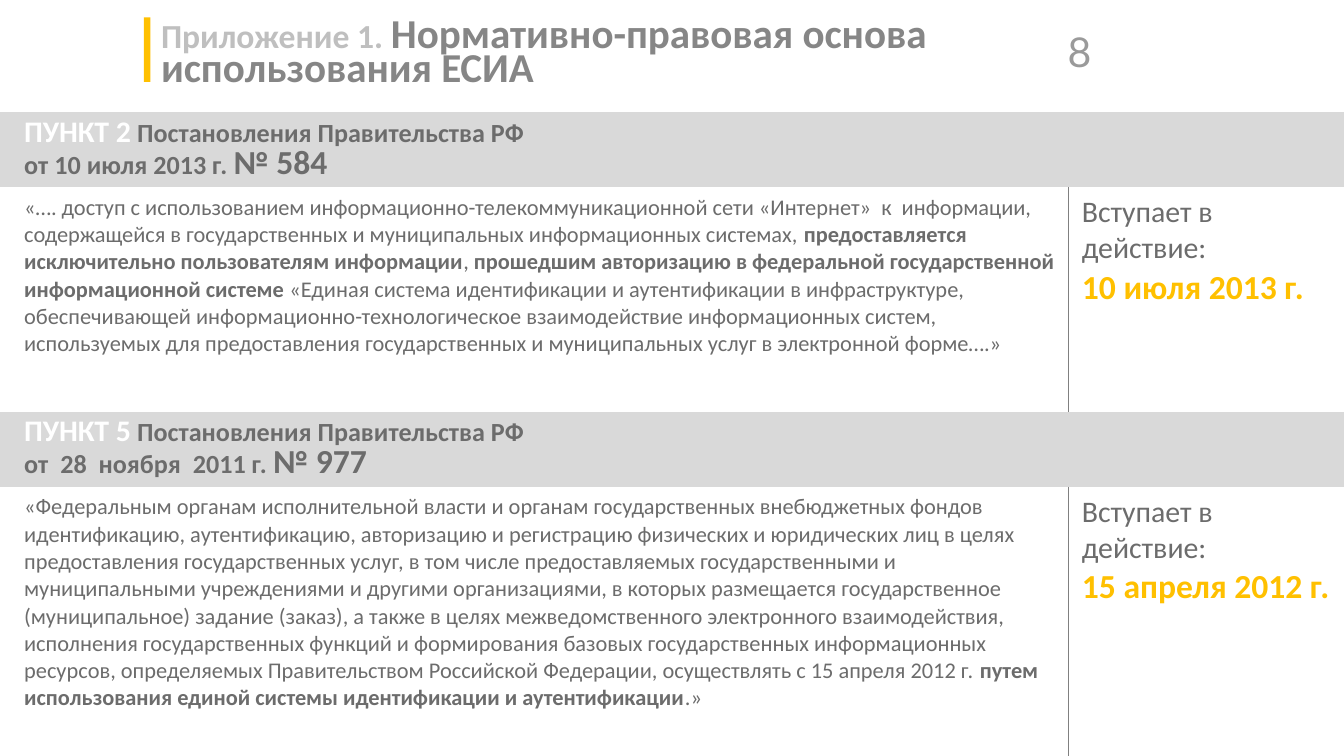
from lxml.etree import SubElement
from pptx import Presentation
from pptx.dml.color import RGBColor
from pptx.enum.shapes import MSO_SHAPE
from pptx.enum.text import MSO_ANCHOR, PP_ALIGN
from pptx.oxml.ns import qn
from pptx.util import Inches, Pt

WIDTH = 10
HEIGHT = WIDTH * 9 / 16
TABLE_TOP = WIDTH / 12
COLUMNS = (7.95, 2.05)
ROWS = (0.56, 1.67, 0.56, 2.04)
NO_GRID_STYLE = "{2D5ABB26-0587-4C30-8999-92F81FD0307C}"
AMBER, BAND, RULE = "FFC000", "D9D9D9", "808080"

# Text formats
BODY = {"name": "Calibri", "size": 12, "bold": False, "color": "6C6C6C"}
STRONG = BODY | {"bold": True}
POINT = STRONG | {"size": 16, "color": "FFFFFF"}
HEADING = STRONG | {"size": 14}
NUMBER = STRONG | {"size": 18}
NOTE = BODY | {"size": 16}
DATE = NUMBER | {"color": AMBER}
TITLE = STRONG | {"size": 22, "color": "868686"}
LABEL = TITLE | {"size": 18, "color": "BFBFBF"}
PAGE_NUMBER = {"name": "Lato", "size": 22, "bold": False, "color": "9A9A9A"}

# Each section: heading lines, quotation spans, effective date
SECTIONS = [
    (
        [[("ПУНКТ 2", POINT), (" Постановления Правительства РФ", HEADING)],
         [("от 10 июля 2013 г. ", HEADING), ("№ 584", NUMBER)]],
        [("«…. доступ с использованием информационно-телекоммуникационной сети "
          "«Интернет»  к  информации, содержащейся в государственных и "
          "муниципальных информационных системах, ", BODY),
         ("предоставляется исключительно пользователям информации", STRONG),
         (", ", BODY),
         ("прошедшим авторизацию в федеральной государственной "
          "информационной системе ", STRONG),
         ("«Единая система идентификации и аутентификации в инфраструктуре, "
          "обеспечивающей информационно-технологическое взаимодействие "
          "информационных систем, используемых для предоставления "
          "государственных и муниципальных услуг в электронной форме….»", BODY)],
        "10 июля 2013 г.",
    ),
    (
        [[("ПУНКТ 5", POINT), (" Постановления Правительства РФ", HEADING)],
         [("от  28  ноября  2011 г. ", HEADING), ("№ 977", NUMBER)]],
        [("«Федеральным органам исполнительной власти и органам государственных "
          "внебюджетных фондов идентификацию, аутентификацию, авторизацию и "
          "регистрацию физических и юридических лиц в целях предоставления "
          "государственных услуг, в том числе предоставляемых государственными и "
          "муниципальными учреждениями и другими организациями, в которых "
          "размещается государственное (муниципальное) задание (заказ), а также "
          "в целях межведомственного электронного взаимодействия, исполнения "
          "государственных функций и формирования базовых государственных "
          "информационных ресурсов, определяемых Правительством Российской "
          "Федерации, осуществлять с 15 апреля 2012 г. ", BODY),
         ("путем использования единой системы идентификации и аутентификации",
          STRONG),
         (".»", BODY)],
        "15 апреля 2012 г.",
    ),
]


def color(value):
    return RGBColor.from_string(value)


def write(frame, lines, spacing=None, indent=0, align=None):
    """Fill a text frame with paragraphs made of (text, format) spans."""
    for index, spans in enumerate(lines):
        para = frame.paragraphs[0] if index == 0 else frame.add_paragraph()
        para.line_spacing = spacing
        para.alignment = align
        if indent:
            para._p.get_or_add_pPr().set("marL", str(Inches(indent)))
        for text, style in spans:
            if text == "\n":
                para.add_line_break()
                continue
            span = para.add_run()
            span.text = text
            for key, value in style.items():
                if key == "color":
                    span.font.color.rgb = color(value)
                else:
                    setattr(span.font, key, Pt(value) if key == "size" else value)


def add_text(page, place, lines, insets, anchor=MSO_ANCHOR.TOP, **layout):
    box = page.shapes.add_textbox(*map(Inches, place))
    frame = box.text_frame
    frame.word_wrap = True
    frame.vertical_anchor = anchor
    for side, inset in zip(("left", "top", "right", "bottom"), insets):
        setattr(frame, f"margin_{side}", Inches(inset))
    write(frame, lines, **layout)


def add_bar(page, place):
    bar = page.shapes.add_shape(MSO_SHAPE.RECTANGLE, *map(Inches, place))
    bar.shadow.inherit = False
    bar.fill.solid()
    bar.fill.fore_color.rgb = color(AMBER)
    bar.line.fill.background()


def add_border(cell, tag):
    line = SubElement(cell._tc.get_or_add_tcPr(), qn(tag), w=str(Pt(0.75)))
    fill = SubElement(line, qn("a:solidFill"))
    SubElement(fill, qn("a:srgbClr"), val=RULE)


def add_table(page):
    table = page.shapes.add_table(
        len(ROWS), len(COLUMNS), 0, Inches(TABLE_TOP),
        Inches(sum(COLUMNS)), Inches(sum(ROWS))).table
    table.first_row = table.horz_banding = False
    table._tbl.tblPr.find(qn("a:tableStyleId")).text = NO_GRID_STYLE
    for column, width in zip(table.columns, COLUMNS):
        column.width = Inches(width)
    for row, height in zip(table.rows, ROWS):
        row.height = Inches(height)
    return table


def fill_section(table, top, heading, quotation, date):
    # Grey heading band
    for column in range(len(COLUMNS)):
        cell = table.cell(top, column)
        cell.fill.solid()
        cell.fill.fore_color.rgb = color(BAND)
    band = table.cell(top, 0)
    band.vertical_anchor = MSO_ANCHOR.MIDDLE
    write(band.text_frame, heading, spacing=0.8, indent=0.08)

    # Quotation and effective date, with a rule between them
    quote, effect = table.cell(top + 1, 0), table.cell(top + 1, 1)
    for cell, tag in ((quote, "a:lnR"), (effect, "a:lnL")):
        add_border(cell, tag)
        cell.fill.background()
    write(quote.text_frame, [quotation], indent=0.08)
    write(effect.text_frame, [[("Вступает в действие:", NOTE)], [(date, DATE)]])


def main():
    deck = Presentation()
    deck.slide_width, deck.slide_height = Inches(WIDTH), Inches(HEIGHT)
    page = deck.slides.add_slide(deck.slide_layouts[6])

    # Title strip
    add_bar(page, (1.07, 0.13, 0.05, 0.48))
    add_text(page, (7.6, 0.16, 0.59, 0.44), [[(" 8", PAGE_NUMBER)]],
             (0.07, 0.04, 0.07, 0.04), align=PP_ALIGN.RIGHT)
    add_text(page, (1.1, 0.09, 7.13, 0.59),
             [[("Приложение 1. ", LABEL), ("Нормативно-правовая основа ", TITLE),
               ("\n", TITLE), ("использования ЕСИА", TITLE)]],
             (0.1, 0.1, 0.1, 0.05), MSO_ANCHOR.MIDDLE, spacing=0.7)

    # Two regulations, two table rows each
    table = add_table(page)
    for index, section in enumerate(SECTIONS):
        fill_section(table, 2 * index, *section)

    deck.save("out.pptx")


if __name__ == "__main__":
    main()
